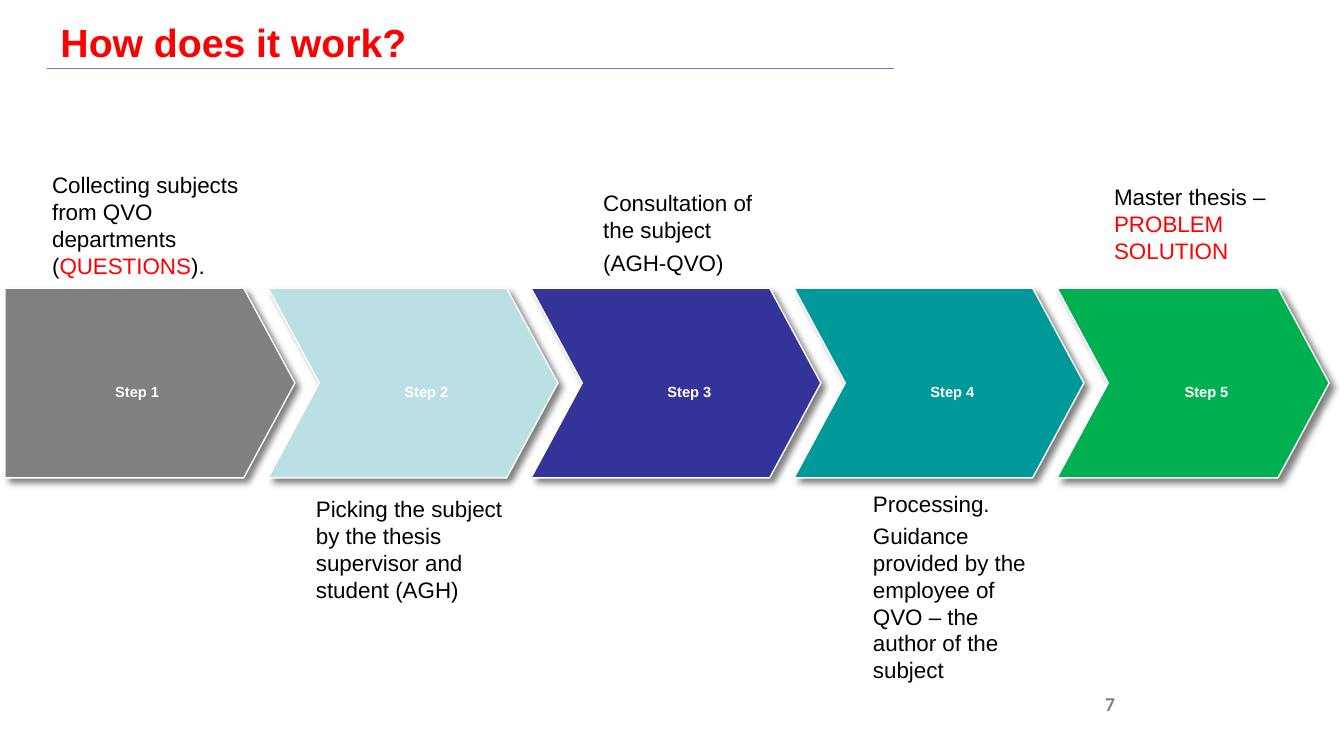
"""Builds the five-step process slide "How does it work?"."""
from lxml import etree
from pptx import Presentation
from pptx.dml.color import RGBColor
from pptx.enum.shapes import MSO_CONNECTOR, MSO_SHAPE
from pptx.enum.text import MSO_ANCHOR, PP_ALIGN
from pptx.oxml import parse_xml
from pptx.oxml.ns import nsdecls, qn
from pptx.util import Inches, Pt

BLACK = RGBColor(0x00, 0x00, 0x00)
WHITE = RGBColor(0xFF, 0xFF, 0xFF)
RED = RGBColor(0xFF, 0x00, 0x00)
GRAY = RGBColor(0x80, 0x80, 0x80)
PALE_BLUE = RGBColor(0xBB, 0xE0, 0xE3)
INDIGO = RGBColor(0x33, 0x33, 0x99)
TEAL = RGBColor(0x00, 0x99, 0x99)
GREEN = RGBColor(0x00, 0xB0, 0x50)
RULE_BLUE = RGBColor(0x75, 0x75, 0xD1)

SHADOW = f"""<a:effectLst {nsdecls("a")}>
  <a:outerShdw blurRad="{Pt(5)}" dist="{Pt(4.2)}" dir="2700000" algn="tl" rotWithShape="0">
    <a:srgbClr val="000000"><a:alpha val="50000"/></a:srgbClr>
  </a:outerShdw>
</a:effectLst>"""

presentation = Presentation()
presentation.slide_width = Inches(13.33)
presentation.slide_height = Inches(7.5)
CELL = presentation.slide_height / 90


def cells(*counts):
    return [round(count * CELL) for count in counts]


def set_frame(frame, anchor, *insets):
    frame.word_wrap = True
    frame.vertical_anchor = anchor
    (frame.margin_left, frame.margin_top,
     frame.margin_right, frame.margin_bottom) = cells(*insets)


slide = presentation.slides.add_slide(presentation.slide_layouts[5])

rule = slide.shapes.add_connector(MSO_CONNECTOR.STRAIGHT, *cells(106.4, 8.2, 5.6, 8.2))
rule.line.color.rgb = RULE_BLUE
rule.line.width = Pt(0.75)
etree.SubElement(rule.element.spPr, qn("a:effectLst"))

title = slide.shapes.title
title.left, title.top, title.width, title.height = cells(6, 1.7, 97.7, 6.5)
title.text_frame.text = "How does it work?"
title.text_frame.vertical_anchor = MSO_ANCHOR.MIDDLE
paragraph = title.text_frame.paragraphs[0]
paragraph.alignment = PP_ALIGN.LEFT
paragraph.font.name = "Arial"
paragraph.font.size = Pt(28)
paragraph.font.bold = True
paragraph.font.color.rgb = RED

number = slide.shapes.add_textbox(*cells(125.4, 81.8, 8.5, 6.6))
number.text_frame.word_wrap = True
number.text_frame.text = "7"
paragraph = number.text_frame.paragraphs[0]
paragraph.alignment = PP_ALIGN.RIGHT
paragraph.font.name = "Calibri"
paragraph.font.size = Pt(14)
paragraph.font.bold = True
paragraph.font.color.rgb = GRAY

STEP_COLORS = [GRAY, PALE_BLUE, INDIGO, TEAL, GREEN]
for index, color in enumerate(STEP_COLORS):
    is_first = index == 0
    is_last = index == len(STEP_COLORS) - 1
    step = slide.shapes.add_shape(
        MSO_SHAPE.PENTAGON if is_first else MSO_SHAPE.CHEVRON,
        *cells(0.6 + 31.3 * index, 34.3, 32.4 if is_last else 34.5, 22.6))
    step.adjustments[0] = 0.27
    step.fill.solid()
    step.fill.fore_color.rgb = color
    step.line.color.rgb = WHITE
    step.line.width = Pt(1)
    step.element.spPr.append(parse_xml(SHADOW))
    set_frame(step.text_frame, MSO_ANCHOR.MIDDLE, 0.6 if is_first else 3.8, 2.6, 0.6, 0.6)
    step.text_frame.text = f"Step {index + 1}"
    paragraph = step.text_frame.paragraphs[0]
    paragraph.alignment = PP_ALIGN.CENTER
    paragraph.font.name = "Arial"
    paragraph.font.size = Pt(10.5)
    paragraph.font.bold = True
    paragraph.font.color.rgb = WHITE

DESCRIPTIONS = [
    ((4.8, 19.2, 28.4, 15), MSO_ANCHOR.BOTTOM,
     [[("Collecting subjects from QVO departments (", BLACK), ("QUESTIONS", RED),
       (").", BLACK)]]),
    ((36.2, 57.6, 25.6, 14.2), MSO_ANCHOR.TOP,
     [[("Picking the subject by the thesis supervisor and student (AGH)", BLACK)]]),
    ((70.4, 21.4, 23.5, 12.4), MSO_ANCHOR.BOTTOM,
     [[("Consultation of the subject", BLACK)], [("(AGH-QVO)", BLACK)]]),
    ((102.5, 56.9, 22.2, 14.2), MSO_ANCHOR.TOP,
     [[("Processing.", BLACK)],
      [("Guidance provided by the employee of QVO – the author of the subject", BLACK)]]),
    ((131.2, 20.4, 22.2, 14.2), MSO_ANCHOR.TOP,
     [[("Master thesis – ", BLACK), ("PROBLEM SOLUTION", RED)]]),
]
for box, anchor, paragraphs in DESCRIPTIONS:
    description = slide.shapes.add_textbox(*cells(*box))
    frame = description.text_frame
    set_frame(frame, anchor, 1.4, 1.4, 1.4, 1)
    for index, runs in enumerate(paragraphs):
        paragraph = frame.add_paragraph() if index else frame.paragraphs[0]
        if index:
            paragraph.space_before = Pt(4)
        for text, color in runs:
            run = paragraph.add_run()
            run.text = text
            run.font.name = "Arial"
            run.font.size = Pt(16)
            run.font.color.rgb = color

presentation.save("out.pptx")
